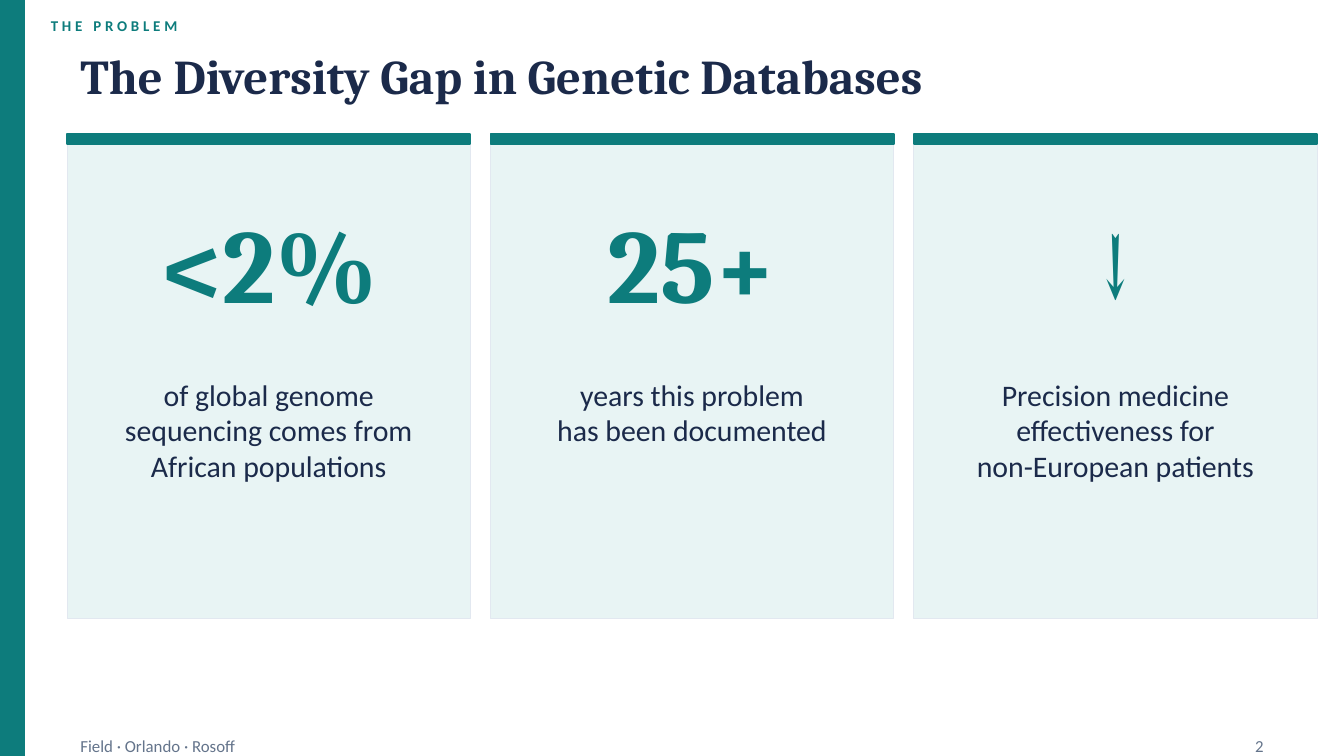
from dataclasses import dataclass

from pptx import Presentation
from pptx.dml.color import RGBColor
from pptx.enum.shapes import MSO_SHAPE
from pptx.enum.text import MSO_ANCHOR, PP_ALIGN
from pptx.util import Pt

RECT = MSO_SHAPE.RECTANGLE
TOP, MIDDLE = MSO_ANCHOR.TOP, MSO_ANCHOR.MIDDLE
LEFT, CENTER, RIGHT = PP_ALIGN.LEFT, PP_ALIGN.CENTER, PP_ALIGN.RIGHT

# Content
KICKER = "THE PROBLEM"
TITLE = "The Diversity Gap in Genetic Databases"
CARDS = [
    ("<2%", ["of global genome", "sequencing comes from", "African populations"]),
    ("25+", ["years this problem", "has been documented"]),
    ("↓", ["Precision medicine", "effectiveness for", "non-European patients"]),
]
FOOTER = "Field · Orlando · Rosoff"
PAGE = "2"


@dataclass(frozen=True)
class Theme:
    teal: str = "0D7C7C"
    navy: str = "1B2A4A"
    card: str = "E8F4F4"
    border: str = "E2E8F0"
    muted: str = "64748B"
    heading: str = "Cambria"
    body: str = "Calibri"
    kicker_size: int = 8
    title_size: int = 26
    stat_size: int = 56
    label_size: int = 16
    footer_size: int = 9


T = Theme()

# Layout, in points
SLIDE_W, SLIDE_H = 720, 405
MARGIN = 36
CARD_TOP, CARD_W, CARD_H, CARD_GAP = 72, 216, 259.2, 10.8
LABEL_INSET = 10.8
FOOTER_TOP, FOOTER_H = 393.84, 11.52

prs = Presentation()
prs.slide_width, prs.slide_height = Pt(SLIDE_W), Pt(SLIDE_H)
s = prs.slides.add_slide(prs.slide_layouts[6])
s.background.fill.solid()
s.background.fill.fore_color.rgb = RGBColor.from_string("FFFFFF")


def add_box(x, y, w, h, fill=T.teal, line=T.teal, weight=1):
    sp = s.shapes.add_shape(RECT, Pt(x), Pt(y), Pt(w), Pt(h))
    sp.shadow.inherit = False
    sp.fill.solid()
    sp.fill.fore_color.rgb = RGBColor.from_string(fill)
    sp.line.color.rgb = RGBColor.from_string(line)
    sp.line.width = Pt(weight)


def add_text(lines, x, y, w, h, *, size, color, font=T.body, bold=False,
             align=LEFT, anchor=MIDDLE, spacing=0):
    tf = s.shapes.add_textbox(Pt(x), Pt(y), Pt(w), Pt(h)).text_frame
    tf.word_wrap = True
    tf.vertical_anchor = anchor
    for i, line in enumerate(lines):
        p = tf.add_paragraph() if i else tf.paragraphs[0]
        p.alignment = align
        r = p.add_run()
        r.text = line
        r.font.name, r.font.size, r.font.bold = font, Pt(size), bold
        r.font.color.rgb = RGBColor.from_string(color)
        if spacing:
            r.font._element.set("spc", str(spacing * 100))


# Side band and headings
add_box(0, 0, 12.96, SLIDE_H)
add_text([KICKER], 20.16, 5.76, 324, 15.84, size=T.kicker_size, color=T.teal,
         bold=True, spacing=2)
add_text([TITLE], MARGIN, 20.16, 648, 39.6, size=T.title_size, color=T.navy,
         font=T.heading, bold=True)

# Statistic cards
for i, (stat, label) in enumerate(CARDS):
    x = MARGIN + i * (CARD_W + CARD_GAP)
    add_box(x, CARD_TOP, CARD_W, CARD_H, fill=T.card, line=T.border, weight=0.5)
    add_box(x, CARD_TOP, CARD_W, 5.04)
    add_text([stat], x, CARD_TOP + 18, CARD_W, 100.8, size=T.stat_size,
             color=T.teal, font=T.heading, bold=True, align=CENTER)
    add_text(label, x + LABEL_INSET, CARD_TOP + 126, CARD_W - 2 * LABEL_INSET, 118.8,
             size=T.label_size, color=T.navy, align=CENTER, anchor=TOP)

# Footer
add_text([FOOTER], MARGIN, FOOTER_TOP, 648, FOOTER_H, size=T.footer_size, color=T.muted)
add_text([PAGE], 648, FOOTER_TOP, 36, FOOTER_H, size=T.footer_size, color=T.muted,
         align=RIGHT)

prs.save("out.pptx")
